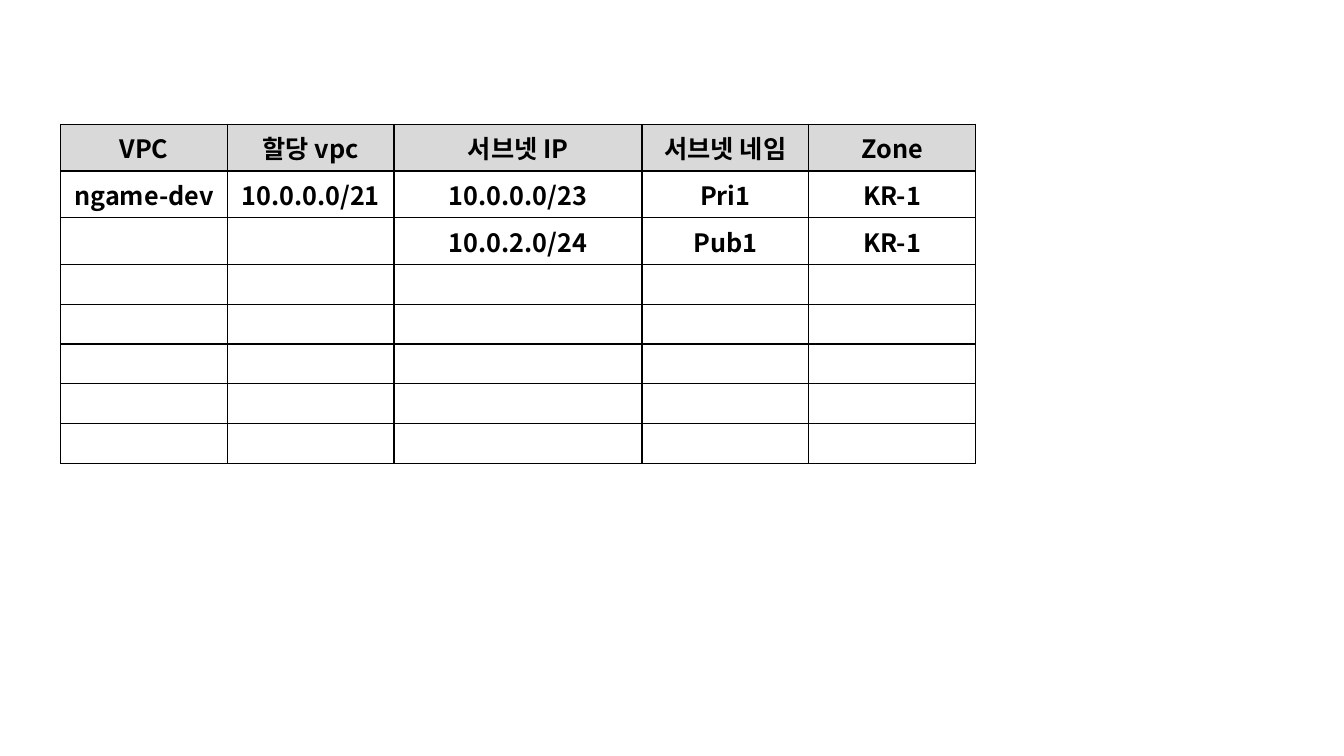
import lxml.etree
import pptx
import pptx.dml.color
import pptx.enum.text
import pptx.oxml.ns
import pptx.util
from pptx.util import Cm

COLORS = {"text": "000000", "border": "000000", "header": "D9D9D9", "body": "FFFFFF"}
FONT = "Noto Sans CJK KR"
COLUMN_WIDTHS = [4.2, 4.2, 6.25, 4.2, 4.2]
ROW_HEIGHTS = [1.18] * 3 + [1.0] * 5
SUBNET_ROWS = [
    ["VPC", "할당 vpc", "서브넷 IP", "서브넷 네임", "Zone"],
    ["ngame-dev", "10.0.0.0/21", "10.0.0.0/23", "Pri1", "KR-1"],
    ["", "", "10.0.2.0/24", "Pub1", "KR-1"],
]


def rgb(name):
    return pptx.dml.color.RGBColor.from_string(COLORS[name])


def add_child(parent, tag, **attributes):
    return lxml.etree.SubElement(parent, pptx.oxml.ns.qn(tag), **attributes)


def write_text(paragraph, text, size=18, bold=True, color="text"):
    paragraph.alignment = pptx.enum.text.PP_ALIGN.CENTER
    run = paragraph.add_run()
    run.text = text
    run.font.name = FONT
    run.font.size = pptx.util.Pt(size)
    run.font.bold = bold
    run.font.color.rgb = rgb(color)
    add_child(run.font._element, "a:ea", typeface=FONT)


def add_borders(cell, width=1):
    """Draw all four sides; call before filling, as lines precede the fill."""
    properties = cell._tc.get_or_add_tcPr()
    for side in ("a:lnL", "a:lnR", "a:lnT", "a:lnB"):
        line = add_child(properties, side, w=str(pptx.util.Pt(width)))
        fill = add_child(line, "a:solidFill")
        add_child(fill, "a:srgbClr", val=COLORS["border"])


def format_cell(cell, text, fill):
    add_borders(cell)
    cell.fill.solid()
    cell.fill.fore_color.rgb = rgb(fill)
    cell.vertical_anchor = pptx.enum.text.MSO_ANCHOR.MIDDLE
    if text:
        write_text(cell.text_frame.paragraphs[0], text)
    else:
        # Without margins, an empty line does not stretch the row.
        cell.margin_top = cell.margin_bottom = 0


def add_subnet_table(slide, left, top):
    table = slide.shapes.add_table(
        len(ROW_HEIGHTS), len(COLUMN_WIDTHS), Cm(left), Cm(top),
        Cm(sum(COLUMN_WIDTHS)), Cm(sum(ROW_HEIGHTS)),
    ).table
    table.horz_banding = False
    for column, width in zip(table.columns, COLUMN_WIDTHS):
        column.width = Cm(width)
    for row_index, (row, height) in enumerate(zip(table.rows, ROW_HEIGHTS)):
        row.height = Cm(height)
        filled = row_index < len(SUBNET_ROWS)
        texts = SUBNET_ROWS[row_index] if filled else [""] * len(COLUMN_WIDTHS)
        for cell, text in zip(row.cells, texts):
            format_cell(cell, text, "body" if row_index else "header")


def main():
    presentation = pptx.Presentation()
    presentation.slide_width = Cm(33.87)
    presentation.slide_height = Cm(19.05)
    slide = presentation.slides.add_slide(presentation.slide_layouts[6])
    add_subnet_table(slide, left=1.53, top=3.13)
    presentation.save("out.pptx")


if __name__ == "__main__":
    main()
